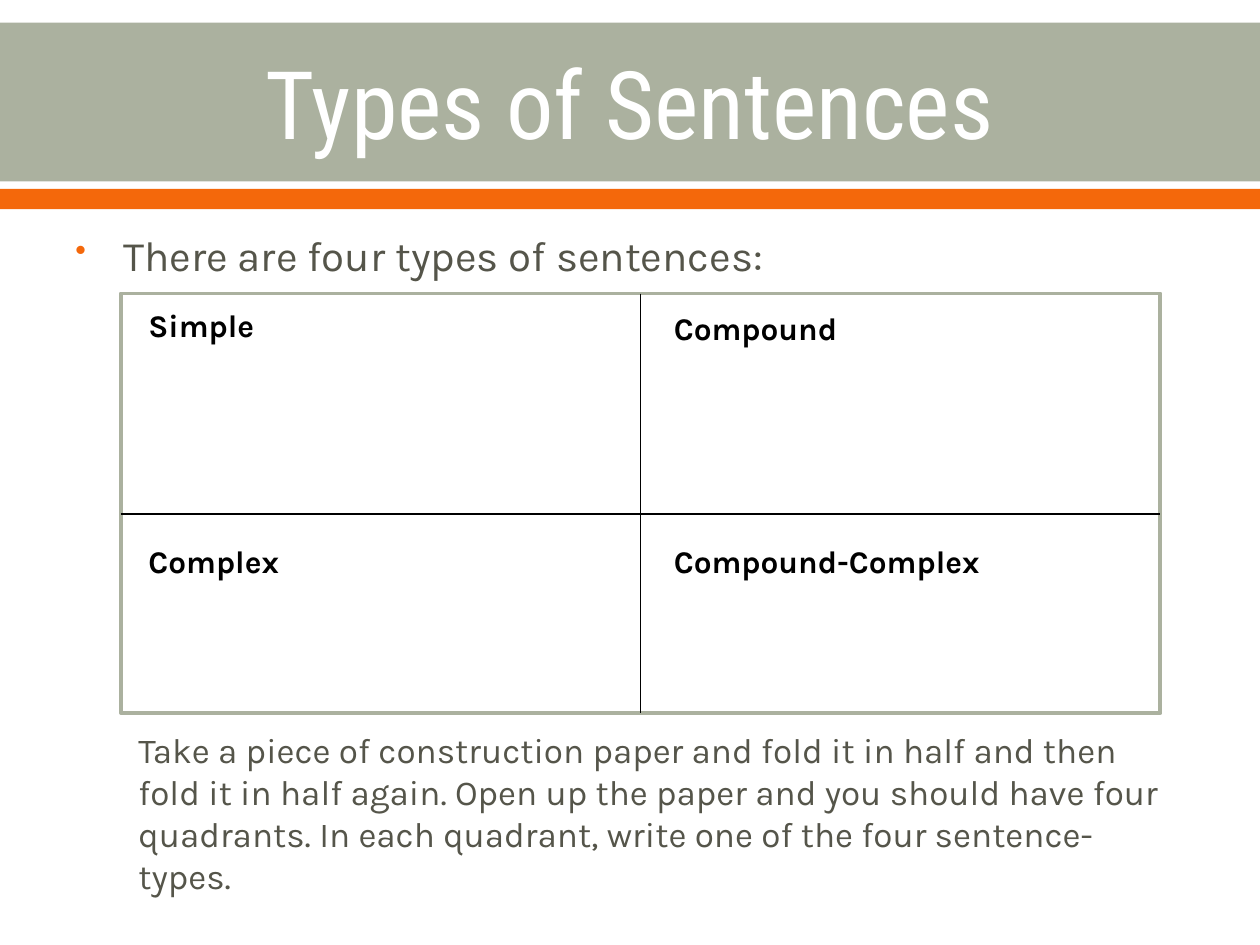
import pptx
import pptx.util
import pptx.dml.color
import pptx.enum.shapes
import pptx.enum.text
import lxml.etree

Inches = pptx.util.Inches
Pt = pptx.util.Pt
SAGE, ORANGE, GREY, WHITE, BLACK = "ABB19F", "F4680B", "55554A", "FFFFFF", "000000"


def rgb(value):
    return pptx.dml.color.RGBColor.from_string(value)


def add_text(s, text, box, size, color, font="Karla", bold=False):
    tf = s.shapes.add_textbox(*map(Inches, box)).text_frame
    tf.word_wrap = True
    p = tf.paragraphs[0]
    p.text = text
    p.font.name = font
    p.font.size = Pt(size)
    p.font.bold = bold
    p.font.color.rgb = rgb(color)
    return tf


prs = pptx.Presentation()
prs.slide_width, prs.slide_height = Inches(10), Inches(7.5)
s = prs.slides.add_slide(prs.slide_layouts[6])

left, top, width, height = 0.96, 2.33, 8.25, 3.33
for box, fill, line in [
    ((0, 0.18, 10, 1.26), SAGE, None),
    ((0, 1.5, 10, 0.16), ORANGE, None),
    ((left, top, width, height), WHITE, SAGE),
]:
    sp = s.shapes.add_shape(pptx.enum.shapes.MSO_SHAPE.RECTANGLE, *map(Inches, box))
    sp.shadow.inherit = False
    sp.fill.solid()
    sp.fill.fore_color.rgb = rgb(fill)
    if line:
        sp.line.color.rgb = rgb(line)
        sp.line.width = Pt(2.25)
    else:
        sp.line.fill.background()

tf = add_text(s, "Types of Sentences", (0.5, 0.2, 9, 1.22), 54, WHITE, "Roboto Condensed")
tf.vertical_anchor = pptx.enum.text.MSO_ANCHOR.MIDDLE
tf.paragraphs[0].alignment = pptx.enum.text.PP_ALIGN.CENTER

tf = add_text(s, "There are four types of sentences:", (0.5, 1.77, 9, 0.5), 24, GREY)
pPr = tf.paragraphs[0]._p.get_or_add_pPr()
pPr.set("marL", str(Inches(0.38)))
pPr.set("indent", str(Inches(-0.38)))
ns = "{http://schemas.openxmlformats.org/drawingml/2006/main}"
bullet = [("buClr", {}), ("buSzPct", {"val": "75000"}), ("buChar", {"char": "•"})]
for i, (tag, attrs) in enumerate(bullet):
    pPr.insert(i, lxml.etree.Element(ns + tag, attrs))
lxml.etree.SubElement(pPr[0], ns + "srgbClr", val=ORANGE)

mid_x, mid_y = left + width / 2, 4.08
for ends in [
    (mid_x, top, mid_x, top + height),
    (left, mid_y, left + width, mid_y),
]:
    line = s.shapes.add_connector(pptx.enum.shapes.MSO_CONNECTOR.STRAIGHT, *map(Inches, ends))
    line.line.color.rgb = rgb(BLACK)
    line.line.width = Pt(0.8)
    lxml.etree.SubElement(line._element.spPr, ns + "effectLst")

for text, x, y in [
    ("Simple", 1.08, 2.38),
    ("Compound", 5.25, 2.4),
    ("Complex", 1.08, 4.25),
    ("Compound-Complex", 5.25, 4.25),
]:
    add_text(s, text, (x, y, 2.83, 0.4), 18, BLACK, bold=True)

add_text(
    s,
    "Take a piece of construction paper and fold it in half and then fold it in half again. "
    "Open up the paper and you should have four quadrants. "
    "In each quadrant, write one of the four sentence-types.",
    (1, 5.73, 8.5, 1.4), 20, GREY,
)

prs.save("out.pptx")
